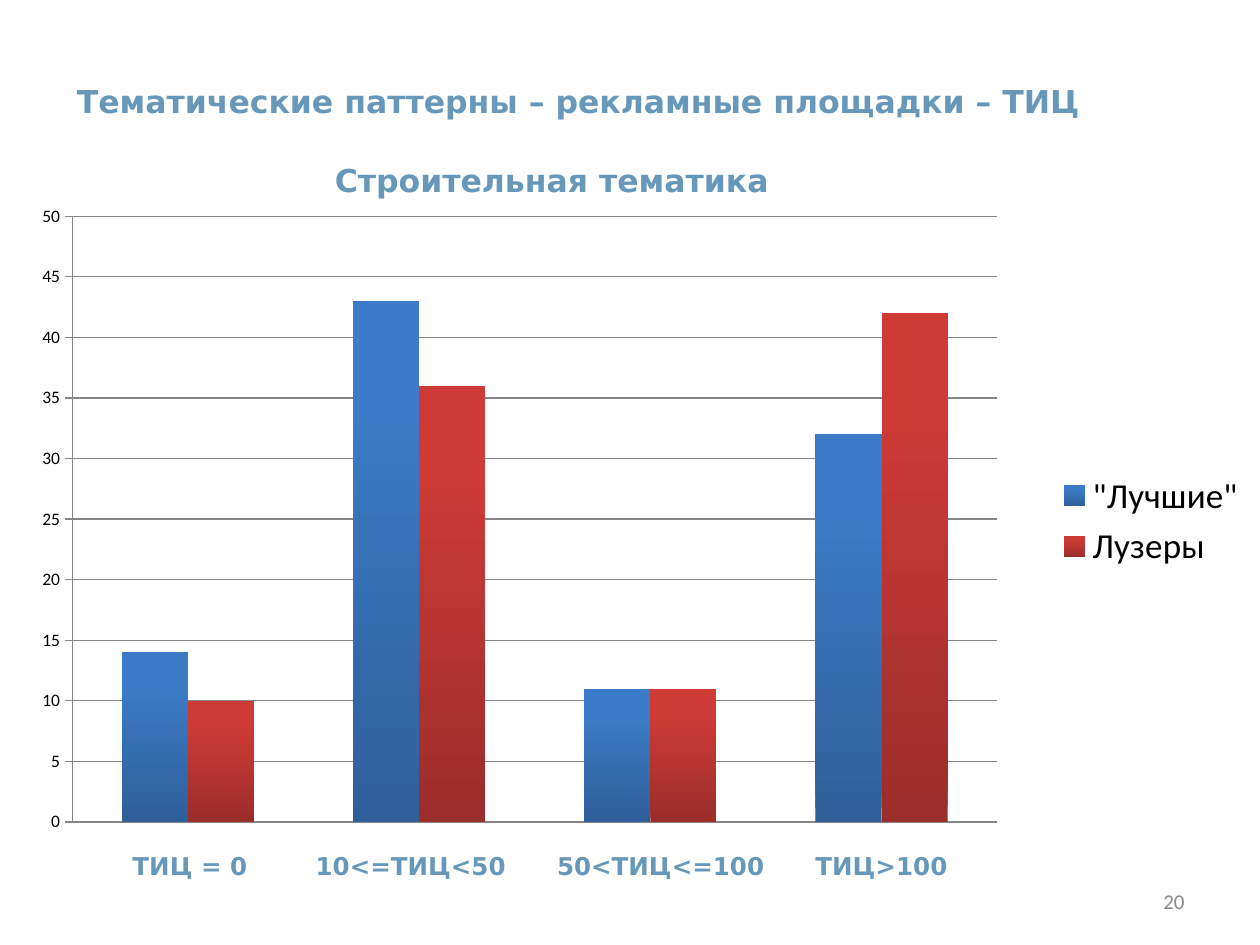
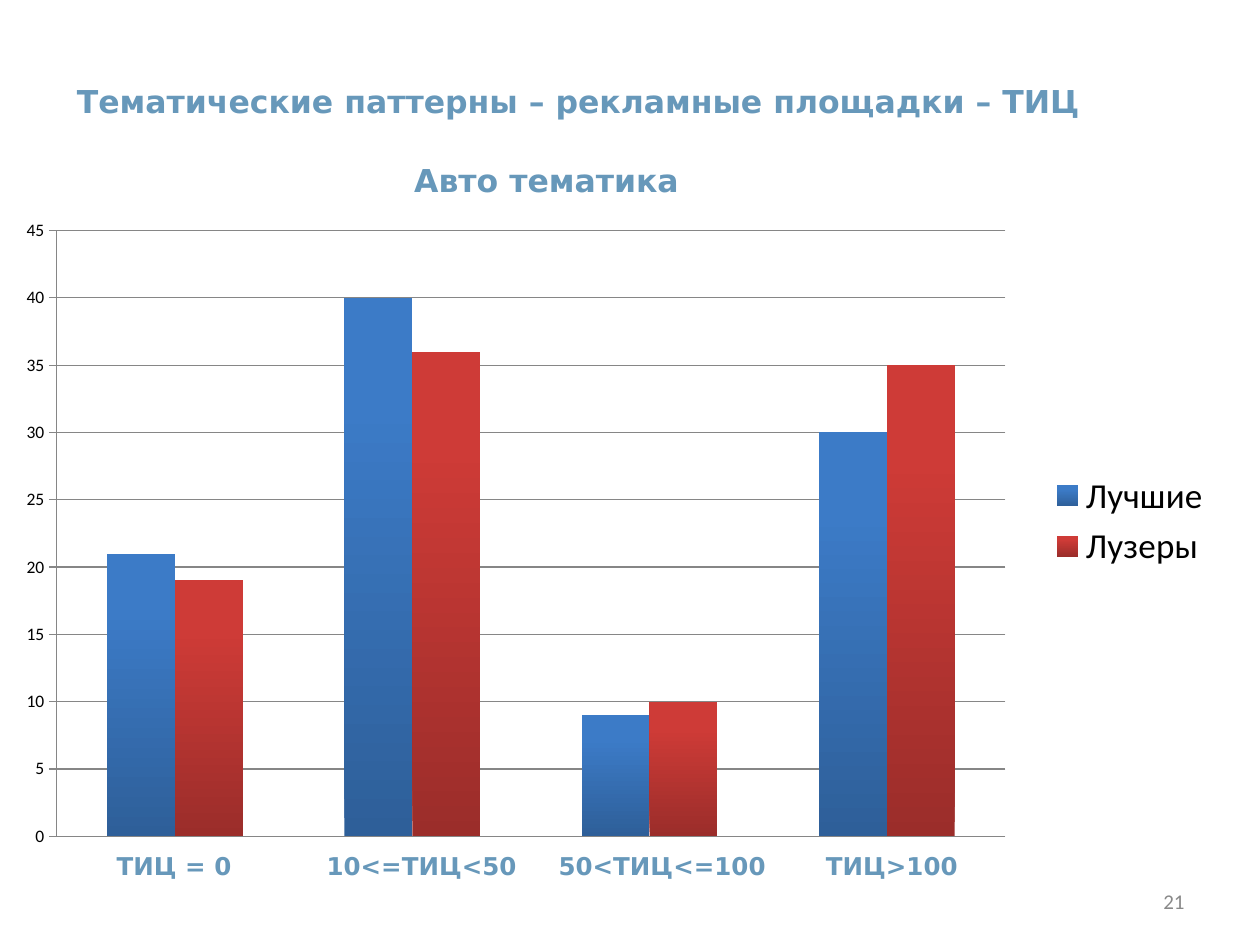
from dataclasses import dataclass

from pptx import Presentation
from pptx import util as u
from pptx.chart.data import CategoryChartData
from pptx.dml.color import RGBColor
from pptx.enum import chart as ch, text
from pptx.oxml import parse_xml
from pptx.oxml.ns import nsdecls, qn

Cm, Pt = u.Cm, u.Pt

# Shared colours, fonts and wording
STEEL = RGBColor(0x67, 0x98, 0xBA)
GREY = RGBColor(0x89, 0x89, 0x89)
RULE = RGBColor(0x86, 0x86, 0x86)
BLACK = RGBColor(0, 0, 0)
BLUE = (RGBColor(0x2E, 0x5F, 0x99), RGBColor(0x3C, 0x7B, 0xC7))
RED = (RGBColor(0x9B, 0x2D, 0x2A), RGBColor(0xCE, 0x3B, 0x37))
HEAD, BODY = "DejaVu Sans", "Calibri"
TITLE = "Тематические паттерны – рекламные площадки – ТИЦ"
GROUPS = ("ТИЦ = 0", "10<=ТИЦ<50", "50<ТИЦ<=100", "ТИЦ>100")


@dataclass
class Box:
    """Place of a part, in centimetres."""
    left: float
    top: float
    width: float
    height: float = 1.02

    def cm(self) -> tuple:
        return Cm(self.left), Cm(self.top), Cm(self.width), Cm(self.height)


@dataclass
class Style:
    font: str
    size: int
    color: RGBColor
    bold: bool = False


@dataclass
class Page:
    number: int
    topic: str
    topic_box: Box
    chart_box: Box
    plot: tuple      # inner plot area as x, y, w, h shares of the chart
    top: int         # end of the value axis
    series: dict
    label_box: Box
    tabs: tuple      # label centres from the left inset, cm


HEADING = Style(HEAD, 18, STEEL, True)
LABEL = Style(HEAD, 14, STEEL, True)
FOOTER = Style(BODY, 12, GREY)

PAGES = (
    Page(20, "Строительная тематика", Box(6.5, 3.12, 9.25),
         Box(0.3, 3.94, 25.1, 13.13), (0.046, 0.032, 0.743, 0.93), 50,
         {'"Лучшие"': (14, 43, 11, 32), "Лузеры": (10, 36, 11, 42)},
         Box(1.09, 17.04, 19.81), (2.49, 6.94, 11.98, 16.43)),
    Page(21, "Авто тематика", Box(8.1, 3.12, 5.84),
         Box(0, 3.94, 24.69, 13.13), (0.046, 0.054, 0.775, 0.93), 45,
         {"Лучшие": (21, 40, 9, 30), "Лузеры": (19, 36, 10, 35)},
         Box(1.9, 17.04, 19.81), (1.36, 6.35, 11.2, 15.83)),
)


def write(slide, box: Box, words: str, style: Style, wrap: bool = True):
    """Add a text box and return its paragraph."""
    frame = slide.shapes.add_textbox(*box.cm()).text_frame
    frame.word_wrap = wrap
    para = frame.paragraphs[0]
    para.text = words
    font = para.font
    font.name, font.size, font.bold = style.font, Pt(style.size), style.bold
    font.color.rgb = style.color
    return para


def set_tabs(para, stops: tuple) -> None:
    """Give the paragraph centred tab stops."""
    tabs = "".join(f'<a:tab pos="{Cm(stop)}" algn="ctr"/>' for stop in stops)
    xml = f'<a:tabLst {nsdecls("a")}>{tabs}</a:tabLst>'
    para._p.get_or_add_pPr().insert(0, parse_xml(xml))


def set_plot(chart, shares: tuple) -> None:
    """Fix the inner plot area."""
    area = chart._chartSpace.chart.plotArea
    for old in area.findall(qn("c:layout")):
        area.remove(old)
    modes = "".join(f'<c:{k}Mode val="edge"/>' for k in "xy")
    sizes = "".join(f'<c:{k} val="{v}"/>' for k, v in zip("xywh", shares))
    area.insert(0, parse_xml(
        f'<c:layout {nsdecls("c")}><c:manualLayout>'
        f'<c:layoutTarget val="inner"/>{modes}{sizes}'
        f'</c:manualLayout></c:layout>'))


def shade(fill, tones: tuple) -> None:
    """Fill from the dark tone at the foot to the light one above."""
    fill.gradient()
    fill.gradient_angle = 90
    for stop, tone, place in zip(fill.gradient_stops, tones, (0, 0.8)):
        stop.color.rgb = tone
        stop.position = place


def draw_chart(slide, page: Page) -> None:
    data = CategoryChartData()
    data.categories = [str(i + 1) for i in range(len(GROUPS))]
    for name, vals in page.series.items():
        data.add_series(name, vals)
    chart = slide.shapes.add_chart(
        ch.XL_CHART_TYPE.COLUMN_CLUSTERED, *page.chart_box.cm(), data).chart
    chart.has_title = False
    chart.font.name, chart.font.size = BODY, Pt(10)
    chart.font.color.rgb = BLACK
    set_plot(chart, page.plot)

    # Columns
    plot = chart.plots[0]
    plot.gap_width, plot.overlap = 150, 0
    plot.vary_by_categories = False
    for row, tones in zip(plot.series, (BLUE, RED)):
        shade(row.format.fill, tones)

    # Axes
    chart.category_axis.visible = False
    axis = chart.value_axis
    axis.minimum_scale, axis.maximum_scale, axis.major_unit = 0, page.top, 5
    axis.major_tick_mark = ch.XL_TICK_MARK.OUTSIDE
    for line in (axis.format.line, axis.major_gridlines.format.line):
        line.color.rgb = RULE
        line.width = Pt(0.75)

    # Legend
    chart.has_legend = True
    key = chart.legend
    key.position = ch.XL_LEGEND_POSITION.RIGHT
    key.include_in_layout = False
    key.font.name, key.font.size = BODY, Pt(20)
    key.font.color.rgb = BLACK


def draw_page(deck, page: Page) -> None:
    slide = deck.slides.add_slide(deck.slide_layouts[6])

    # Page number
    para = write(slide, Box(18.21, 17.65, 5.92), str(page.number), FOOTER)
    para.alignment = text.PP_ALIGN.RIGHT
    slide.shapes[-1].text_frame.vertical_anchor = text.MSO_ANCHOR.MIDDLE

    # Title, group labels and topic
    write(slide, Box(1.3, 1.52, 20.96), TITLE, HEADING, wrap=False)
    words = "".join("\t" + group for group in GROUPS)
    set_tabs(write(slide, page.label_box, words, LABEL), page.tabs)
    write(slide, page.topic_box, page.topic, HEADING, wrap=False)

    draw_chart(slide, page)


def main() -> None:
    deck = Presentation()
    deck.slide_width, deck.slide_height = Cm(25.4), Cm(19.05)
    for page in PAGES:
        draw_page(deck, page)
    deck.save("out.pptx")


if __name__ == "__main__":
    main()
